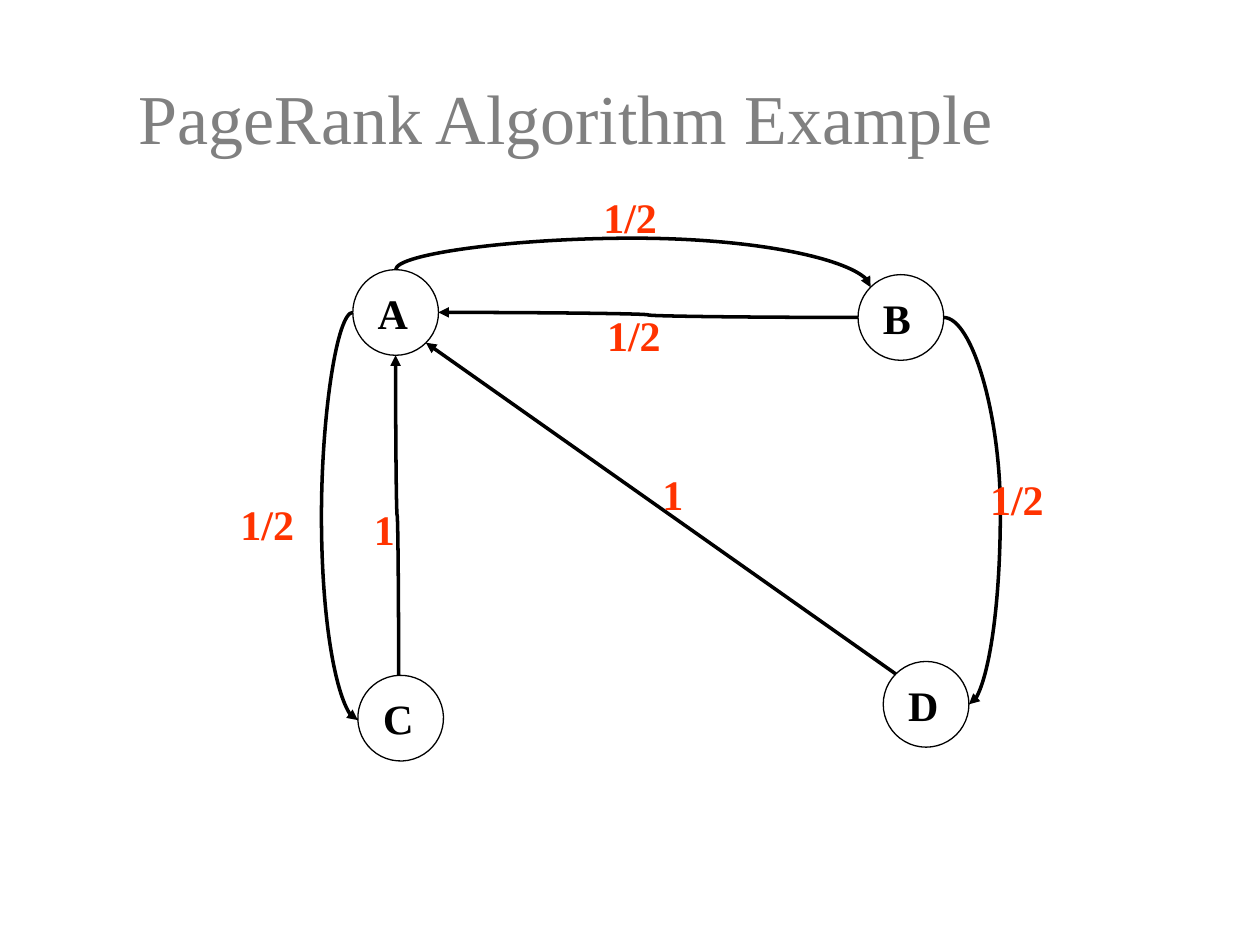
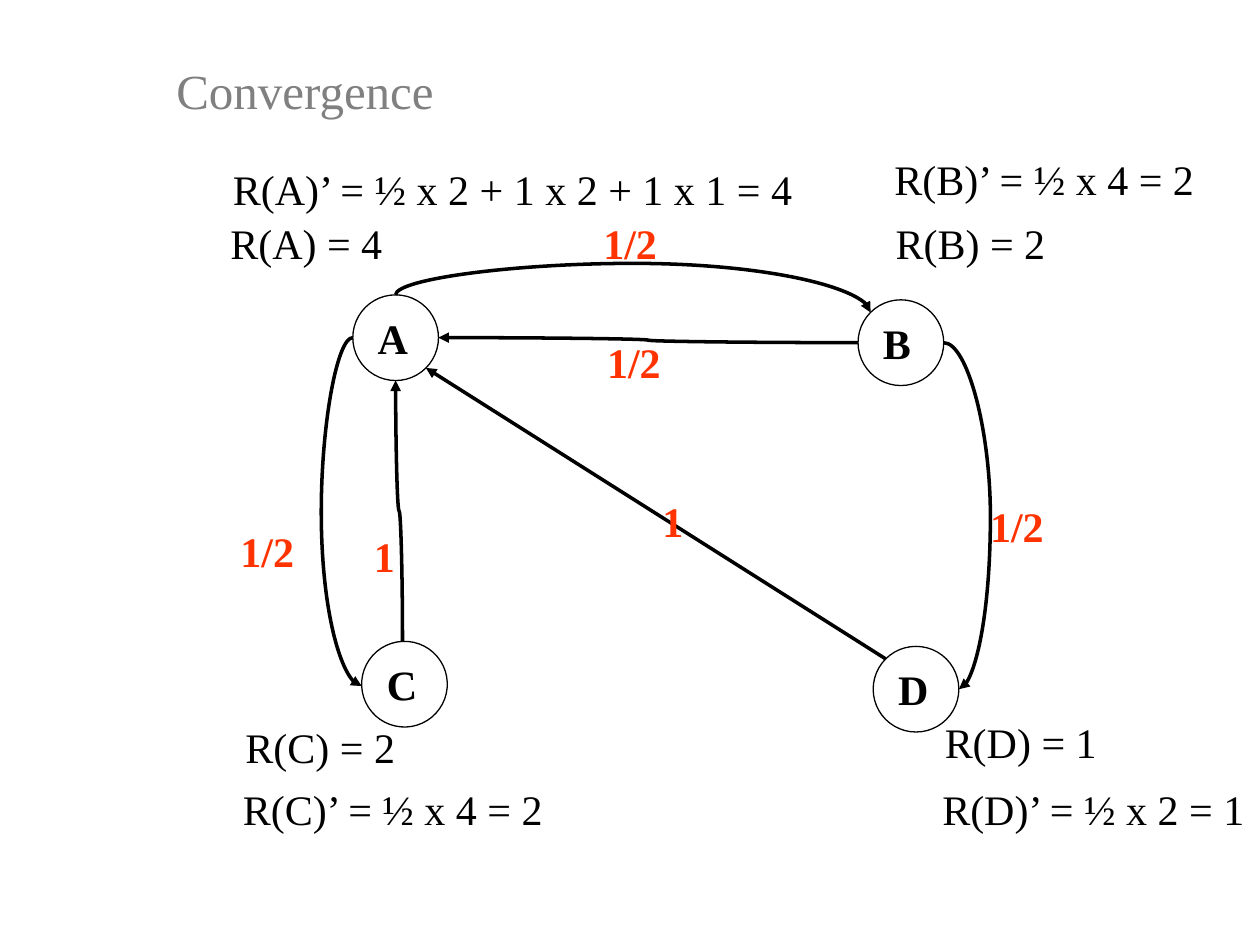
import math
from dataclasses import dataclass

import pptx
import pptx.dml.color
import pptx.enum.shapes
import pptx.enum.text
import pptx.oxml
import pptx.oxml.ns
import pptx.util
from pptx.util import Inches

COLORS = {"ink": "000000", "weight": "FF3300", "title": "808080"}
FONT = "Times New Roman"
DIAMETER = 0.68
BULGE = 0.25  # how far an outer curve swings past its ends
TILT = -2.6  # node C is turned slightly
MIDDLE = pptx.enum.text.MSO_ANCHOR.MIDDLE
TOP = pptx.enum.text.MSO_ANCHOR.TOP

# Directions on a node's rim, in degrees clockwise from the right
RIGHT, BOTTOM_RIGHT, LEFT, TOP_LEFT, UP, DOWN = 0, 45, 180, 225, 270, 90


@dataclass(frozen=True)
class Node:
    name: str
    left: float
    top: float
    tilt: float = 0

    def rim(self, angle: float) -> tuple[float, float]:
        a, radius = math.radians(angle + self.tilt), DIAMETER / 2
        return (self.left + radius * (1 + math.cos(a)),
                self.top + radius * (1 + math.sin(a)))


@dataclass(frozen=True)
class Edge:
    start: str
    start_angle: float
    end: str
    end_angle: float
    curved: bool = True
    vertical: bool = False  # leaves its node vertically
    side: int = 0  # -1 swings left or up, 1 right or down, 0 bends halfway


@dataclass(frozen=True)
class Label:
    text: str
    left: float
    top: float
    width: float


@dataclass(frozen=True)
class Title:
    text: str
    box: tuple[float, float, float, float]
    size: int
    anchor: pptx.enum.text.MSO_ANCHOR


@dataclass(frozen=True)
class GraphSlide:
    title: Title
    nodes: tuple[Node, ...]
    weight_shift: float = 0
    ranks: tuple[Label, ...] = ()


EDGES = (
    Edge("A", UP, "B", TOP_LEFT, vertical=True, side=-1),
    Edge("B", LEFT, "A", RIGHT),
    Edge("B", RIGHT, "D", RIGHT, side=1),
    Edge("C", UP, "A", DOWN, vertical=True),
    Edge("A", LEFT, "C", LEFT, side=-1),
    Edge("D", TOP_LEFT, "A", BOTTOM_RIGHT, curved=False),
)

WEIGHTS = (
    Label("1/2", 4.69, 1.47, 0.87),
    Label("1/2", 1.81, 3.91, 0.87),
    Label("1", 2.87, 3.95, 0.87),
    Label("1/2", 7.76, 3.71, 0.87),
    Label("1/2", 4.72, 2.41, 0.87),
    Label("1", 5.16, 3.67, 0.87),
)

SLIDES = (
    GraphSlide(
        Title("PageRank Algorithm Example", (1, 0.3, 8.5, 1.25), 40, MIDDLE),
        (Node("A", 2.8, 2.14), Node("C", 2.84, 5.36, TILT),
         Node("D", 7.01, 5.25), Node("B", 6.81, 2.18)),
    ),
    GraphSlide(
        Title("Convergence", (1.3, 0.43, 7.28, 0.57), 28, TOP),
        (Node("A", 2.8, 2.34), Node("C", 2.87, 5.09, TILT),
         Node("D", 6.93, 5.13), Node("B", 6.81, 2.38)),
        weight_shift=0.21,
        ranks=(
            Label("R(A) = 4", 1.73, 1.68, 1.57),
            Label("R(B) = 2", 7.01, 1.68, 1.57),
            Label("R(C) = 2", 1.85, 5.68, 1.57),
            Label("R(D) = 1", 7.4, 5.64, 1.57),
            Label("R(A)’ = ½ x 2 + 1 x 2 + 1 x 1 = 4", 1.75, 1.25, 5),
            Label("R(B)’ = ½ x 4 = 2", 7, 1.17, 2.7),
            Label("R(C)’ = ½ x 4 = 2", 1.83, 6.17, 2.64),
            Label("R(D)’ = ½ x 2 = 1", 7.38, 6.17, 2.62),
        ),
    ),
)


def rgb(name: str) -> pptx.dml.color.RGBColor:
    return pptx.dml.color.RGBColor.from_string(COLORS[name])


def write(sp, text: str, *, size: int = 24, color: str = "ink",
          bold: bool = False, anchor=TOP) -> None:
    tf = sp.text_frame
    tf.word_wrap = True
    tf.auto_size = pptx.enum.text.MSO_AUTO_SIZE.NONE
    tf.vertical_anchor = anchor
    p = tf.paragraphs[0]
    p.alignment = pptx.enum.text.PP_ALIGN.LEFT
    r = p.add_run()
    r.text = text
    r.font.name, r.font.size, r.font.bold = FONT, pptx.util.Pt(size), bold
    r.font.color.rgb = rgb(color)


def add_title(s, title: Title) -> None:
    sp = s.shapes.title
    sp.left, sp.top, sp.width, sp.height = map(Inches, title.box)
    write(sp, title.text, size=title.size, color="title", anchor=title.anchor)


def add_node(s, node: Node) -> None:
    sp = s.shapes.add_shape(
        pptx.enum.shapes.MSO_SHAPE.OVAL, Inches(node.left), Inches(node.top),
        Inches(DIAMETER), Inches(DIAMETER))
    sp.rotation = node.tilt
    sp.shadow.inherit = False
    sp.fill.background()
    sp.line.color.rgb = rgb("ink")
    sp.line.width = pptx.util.Pt(0.75)
    write(sp, node.name, bold=True, anchor=MIDDLE)


def add_label(s, label: Label, *, shift: float = 0, **style) -> None:
    sp = s.shapes.add_textbox(Inches(label.left), Inches(label.top + shift),
                              Inches(label.width), Inches(0.5))
    write(sp, label.text, **style)


def bend_ratio(first: float, last: float, side: int) -> float:
    """Where the curve's middle lies, as a share of the way from first to last."""
    if side == 0:
        return 0.5
    outermost = min(first, last) if side < 0 else max(first, last)
    return (outermost + side * BULGE - first) / (last - first)


def add_edge(s, edge: Edge, nodes: dict[str, Node]) -> None:
    x1, y1 = nodes[edge.start].rim(edge.start_angle)
    x2, y2 = nodes[edge.end].rim(edge.end_angle)
    ends = (x1, y1, x2, y2)
    if edge.vertical:  # lay it out a quarter turn back, about its centre
        cx, cy, dx, dy = (x1 + x2) / 2, (y1 + y2) / 2, x2 - x1, y2 - y1
        ends = (cx - dy / 2, cy + dx / 2, cx + dy / 2, cy - dx / 2)
    kinds = pptx.enum.shapes.MSO_CONNECTOR
    line = s.shapes.add_connector(
        kinds.CURVE if edge.curved else kinds.STRAIGHT, *map(Inches, ends))
    line.line.color.rgb = rgb("ink")
    line.line.width = pptx.util.Pt(2)

    # Bend, quarter turn, arrowhead and no shadow
    sppr = line._element.spPr
    qn, sub = pptx.oxml.ns.qn, pptx.oxml.parse_xml
    ns = pptx.oxml.ns.nsdecls("a")
    if edge.vertical:
        sppr.find(qn("a:xfrm")).set("rot", "5400000")
    if edge.curved:
        span = (y1, y2) if edge.vertical else (x1, x2)
        value = round(100000 * bend_ratio(*span, edge.side))
        sppr.find(qn("a:prstGeom")).find(qn("a:avLst")).append(
            sub(f'<a:gd {ns} name="adj1" fmla="val {value}"/>'))
    sppr.find(qn("a:ln")).append(sub(f'<a:tailEnd {ns} type="triangle"/>'))
    sppr.append(sub(f"<a:effectLst {ns}/>"))


def build_slide(prs, graph: GraphSlide) -> None:
    s = prs.slides.add_slide(prs.slide_layouts[5])  # title only
    add_title(s, graph.title)
    for node in graph.nodes:
        add_node(s, node)
    by_name = {node.name: node for node in graph.nodes}
    for edge in EDGES:
        add_edge(s, edge, by_name)
    for weight in WEIGHTS:
        add_label(s, weight, shift=graph.weight_shift, color="weight", bold=True)
    for rank in graph.ranks:
        add_label(s, rank)


def main() -> None:
    prs = pptx.Presentation()
    prs.slide_width, prs.slide_height = Inches(10), Inches(7.5)
    for graph in SLIDES:
        build_slide(prs, graph)
    prs.save("out.pptx")


if __name__ == "__main__":
    main()
